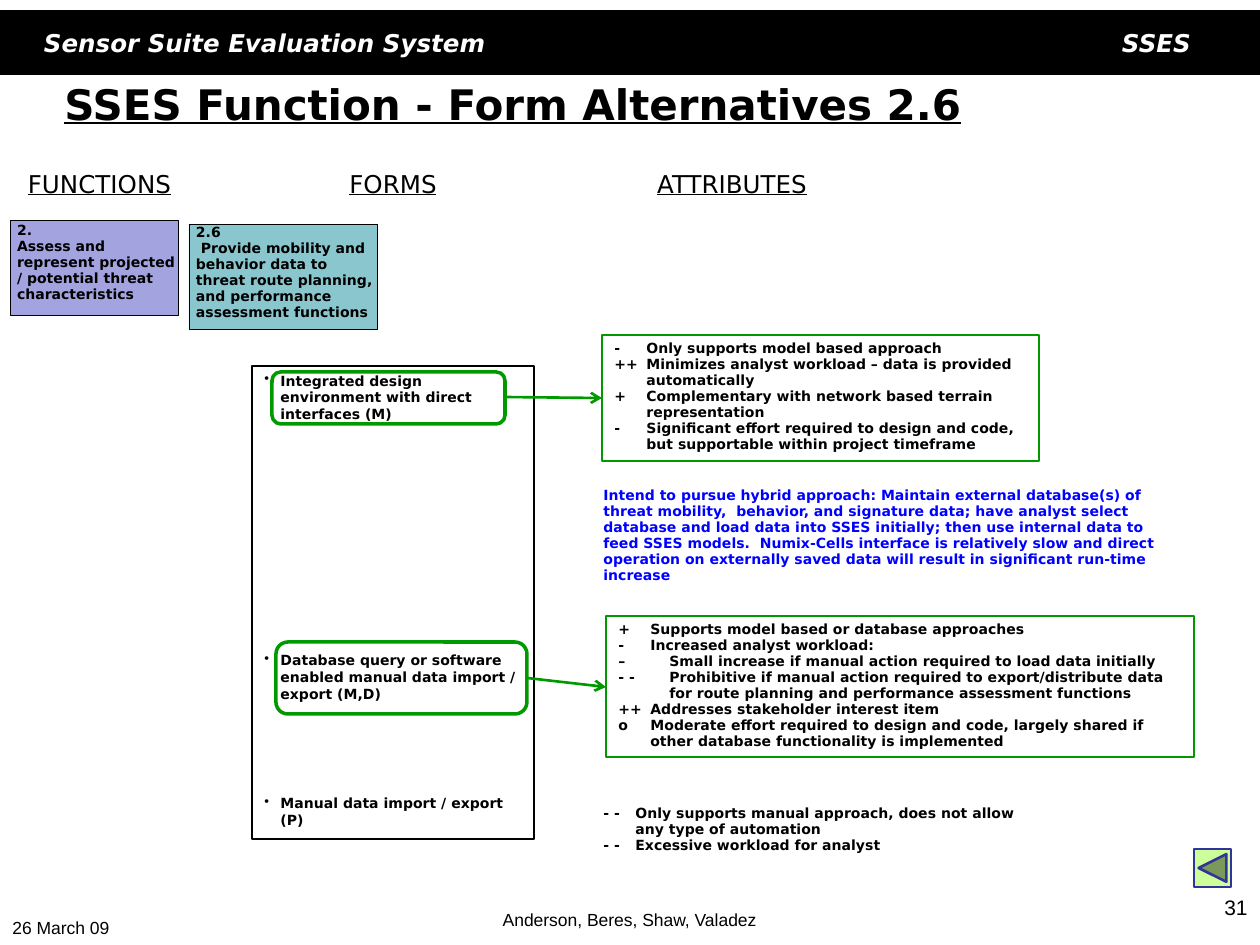
"""Builds the SSES function and form alternatives slide."""
import pptx
import pptx.dml.color
import pptx.enum.shapes
import pptx.enum.text
import pptx.oxml
import pptx.oxml.ns
import pptx.util

ALIGN = pptx.enum.text.PP_ALIGN
ANCHOR = pptx.enum.text.MSO_ANCHOR
SHAPE = pptx.enum.shapes.MSO_SHAPE
NAMESPACE = pptx.oxml.ns.nsdecls("a")
GREEN = "009900"
SANS = "DejaVu Sans"
BODY = {"size": 8, "bold": True, "name": SANS}
HEADING = {"size": 14, "underline": True, "name": SANS}
BANNER = {"size": 14, "bold": True, "italic": True, "name": SANS}
TITLE = {"size": 24, "bold": True, "underline": True, "name": SANS}


def px(length):
    return round(length * 914400 / 126)


def write_text(shape, paragraphs, style, color="000000", frame_format={}, paragraph_format={}):
    frame = shape.text_frame
    frame_values = {"word_wrap": True, "vertical_anchor": ANCHOR.TOP, **frame_format}
    for name, value in frame_values.items():
        setattr(frame, name, value)
    for index, (text, indent, space_before) in enumerate(paragraphs):
        paragraph = frame.paragraphs[0] if index == 0 else frame.add_paragraph()
        paragraph_values = {"alignment": ALIGN.LEFT, "space_before": pptx.util.Pt(space_before), **paragraph_format}
        for name, value in paragraph_values.items():
            setattr(paragraph, name, value)
        if indent:
            properties = paragraph._p.get_or_add_pPr()
            properties.set("marL", str(px(indent)))
            properties.set("indent", str(-px(indent)))
        run = paragraph.add_run()
        run.text = text
        for name, value in {**style, "size": pptx.util.Pt(style["size"])}.items():
            setattr(run.font, name, value)
        run.font.color.rgb = pptx.dml.color.RGBColor.from_string(color)


presentation = pptx.Presentation()
presentation.slide_width = px(1260)
presentation.slide_height = px(945)
slide = presentation.slides.add_slide(presentation.slide_layouts[6])

outlines = {
    "banner": (SHAPE.RECTANGLE, 0, 11, 1260, 63, "000000", "000000", 0.75),
    "function": (SHAPE.RECTANGLE, 10, 220, 168, 95, "A3A3E0", "000000", 0.5),
    "subfunction": (SHAPE.RECTANGLE, 189, 224, 189, 105, "8AC6CD", "000000", 0.5),
    "forms": (SHAPE.RECTANGLE, 252, 366, 282, 473, None, "000000", 0.75),
    "integrated attributes": (SHAPE.RECTANGLE, 602, 335, 437, 126, None, GREEN, 1.5),
    "database attributes": (SHAPE.RECTANGLE, 606, 616, 588, 141, None, GREEN, 1.5),
    "integrated form": (SHAPE.ROUNDED_RECTANGLE, 272, 372, 233, 52, None, GREEN, 2),
    "database form": (SHAPE.ROUNDED_RECTANGLE, 276, 642, 251, 72, None, GREEN, 2),
    "back button": (SHAPE.ACTION_BUTTON_BACK_OR_PREVIOUS, 1194, 849, 37, 38, "CCFF99", "333399", 1.5),
}
shapes = {}
for name, (kind, left, top, width, height, fill, line, weight) in outlines.items():
    shape = slide.shapes.add_shape(kind, px(left), px(top), px(width), px(height))
    shape.shadow.inherit = False
    if fill:
        shape.fill.solid()
        shape.fill.fore_color.rgb = pptx.dml.color.RGBColor.from_string(fill)
    else:
        shape.fill.background()
    shape.line.color.rgb = pptx.dml.color.RGBColor.from_string(line)
    shape.line.width = pptx.util.Pt(weight)
    shapes[name] = shape

tight = {"line_spacing": 0.95}
centered = {"alignment": ALIGN.CENTER}
right = {"alignment": ALIGN.RIGHT}
middle = {"vertical_anchor": ANCHOR.MIDDLE}
bottom = {"vertical_anchor": ANCHOR.BOTTOM}
narrow = {"margin_left": px(7), "margin_top": px(3), "margin_right": px(2), "margin_bottom": px(2)}

write_text(shapes["banner"], [("Sensor Suite Evaluation System\tSSES", 0, 0)],
           BANNER, "FFFFFF", {**middle, "margin_left": px(44)})
banner_tabs = pptx.oxml.parse_xml(f'<a:tabLst {NAMESPACE}><a:tab pos="{px(1147)}" algn="r"/></a:tabLst>')
shapes["banner"].text_frame.paragraphs[0]._p.get_or_add_pPr().append(banner_tabs)
write_text(shapes["function"], [
    ("2.", 0, 0),
    ("Assess and represent projected / potential threat characteristics", 0, 0),
], BODY, frame_format=narrow, paragraph_format=tight)
write_text(shapes["subfunction"], [
    ("2.6", 0, 0),
    (" Provide mobility and behavior data to threat route planning, and performance assessment functions", 0, 0),
], BODY, frame_format={**narrow, "margin_top": px(1), "margin_bottom": px(1)}, paragraph_format=tight)
write_text(shapes["forms"], [
    ("Integrated design environment with direct interfaces (M)", 16, 0),
    ("Database query or software enabled manual data import / export (M,D)", 16, 131),
    ("Manual data import / export (P)", 16, 53),
], BODY)
for paragraph in shapes["forms"].text_frame.paragraphs:
    bullet = pptx.oxml.parse_xml(f'<a:buChar {NAMESPACE} char="•"/>')
    paragraph._p.get_or_add_pPr().append(bullet)
write_text(shapes["integrated attributes"], [
    ("-\tOnly supports model based approach", 32, 0),
    ("++\tMinimizes analyst workload – data is provided automatically", 32, 0),
    ("+\tComplementary with network based terrain representation", 32, 0),
    ("-\tSignificant effort required to design and code, but supportable within project timeframe", 32, 0),
], BODY, paragraph_format=tight)
write_text(shapes["database attributes"], [
    ("+\tSupports model based or database approaches", 32, 0),
    ("-\tIncreased analyst workload:", 32, 0),
    ("–\tSmall increase if manual action required to load data initially", 51, 0),
    ("- -\tProhibitive if manual action required to export/distribute data "
     "for route planning and performance assessment functions", 51, 0),
    ("++\tAddresses stakeholder interest item", 32, 0),
    ("o\tModerate effort required to design and code, largely shared if "
     "other database functionality is implemented", 32, 0),
], BODY, paragraph_format=tight)

hybrid_plan = (
    "Intend to pursue hybrid approach: Maintain external database(s) of threat mobility,  behavior, "
    "and signature data; have analyst select database and load data into SSES initially; then use "
    "internal data to feed SSES models.  Numix-Cells interface is relatively slow and direct operation "
    "on externally saved data will result in significant run-time increase"
)
manual_attributes = [
    ("- -\tOnly supports manual approach, does not allow any type of automation", 32, 0),
    ("- -\tExcessive workload for analyst", 32, 0),
]
small = {"size": 10, "name": "Arial"}
number = {"size": 12, "name": "Arial"}
text_boxes = [
    (52, 62, 1134, 84, [("SSES Function - Form Alternatives 2.6", 0, 0)], TITLE, "000000", middle, {}),
    (4, 163, 191, 43, [("FUNCTIONS", 0, 0)], HEADING, "000000", {}, centered),
    (252, 163, 282, 43, [("FORMS", 0, 0)], HEADING, "000000", {}, centered),
    (591, 163, 282, 43, [("ATTRIBUTES", 0, 0)], HEADING, "000000", {}, centered),
    (591, 482, 597, 110, [(hybrid_plan, 0, 0)], BODY, "0000FF", {}, tight),
    (591, 800, 437, 60, manual_attributes, BODY, "000000", {}, tight),
    (0, 911, 198, 34, [("26 March 09", 0, 0)], small, "000000", {}, {}),
    (397, 892, 465, 44, [("Anderson, Beres, Shaw, Valadez", 0, 0)], small, "000000", bottom, centered),
    (966, 888, 294, 57, [("31", 0, 0)], number, "000000", {}, right),
]
for left, top, width, height, paragraphs, style, color, frame_format, paragraph_format in text_boxes:
    text_box = slide.shapes.add_textbox(px(left), px(top), px(width), px(height))
    write_text(text_box, paragraphs, style, color, frame_format, paragraph_format)

for start_x, start_y, end_x, end_y in [(505, 397, 602, 398), (527, 678, 606, 687)]:
    arrow = slide.shapes.add_connector(
        pptx.enum.shapes.MSO_CONNECTOR.STRAIGHT, px(start_x), px(start_y), px(end_x), px(end_y))
    arrow.line.color.rgb = pptx.dml.color.RGBColor.from_string(GREEN)
    arrow.line.width = pptx.util.Pt(1.5)
    arrow.line._get_or_add_ln().append(pptx.oxml.parse_xml(f'<a:tailEnd {NAMESPACE} type="arrow"/>'))
    arrow._element.spPr.append(pptx.oxml.parse_xml(f"<a:effectLst {NAMESPACE}/>"))

presentation.save("out.pptx")
